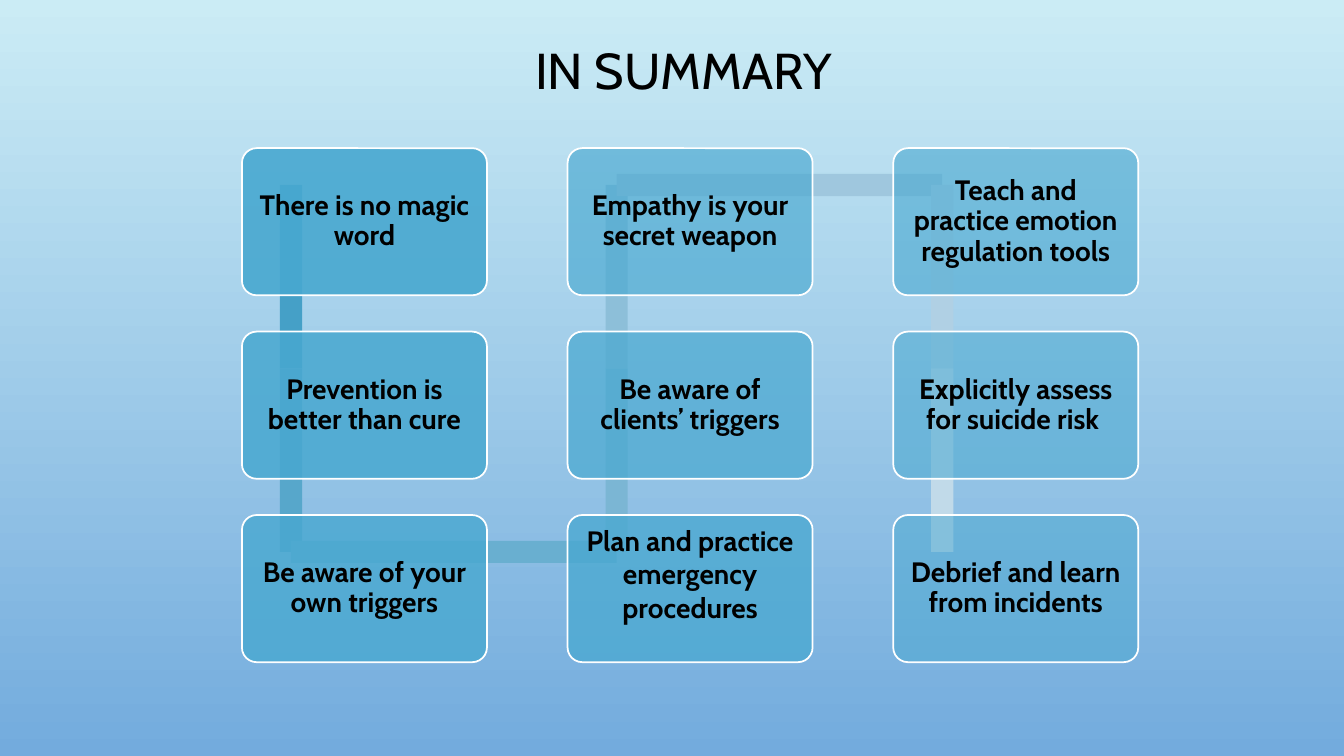
from dataclasses import dataclass

import pptx
import pptx.dml.color
import pptx.enum.shapes
import pptx.enum.text
import pptx.oxml.ns
import pptx.slide
import pptx.util
from lxml import etree

In = pptx.util.Inches
Pt = pptx.util.Pt
SHAPE = pptx.enum.shapes.MSO_SHAPE

COLORS = {
    "sky_top": "CBECF5", "sky_bottom": "73ABDD",
    "card": "48A8D0", "border": "FFFFFF", "text": "000000",
    "link0": "45A0C7", "link1": "57A7CB", "link2": "69AFD0", "link3": "7BB6D4",
    "link4": "8DBFD9", "link5": "9FC7DE", "link6": "B0D0E4", "link7": "C1DAE9",
}
FONT = "Cabin"

# Grid of cards, in inches
LEFT, TOP = 2.4, 1.47
COL_STEP, ROW_STEP = 3.23, 1.82
CARD_W, CARD_H = 2.43, 1.46
LINK_W = 0.22
INSET = 0.12


@dataclass
class Card:
    col: int
    row: int
    text: str
    line_spacing: float = 0.9
    inset_top: float = INSET
    inset_bottom: float = INSET

    @property
    def left(self) -> float:
        return LEFT + self.col * COL_STEP

    @property
    def top(self) -> float:
        return TOP + self.row * ROW_STEP

    @property
    def joint(self) -> tuple[float, float]:
        """Point inside the card where the links meet."""
        return self.left + 0.2 * CARD_W, self.top + 0.25 * CARD_H


CARDS = [
    Card(0, 0, "There is no magic word"),
    Card(0, 1, "Prevention is better than cure"),
    Card(0, 2, "Be aware of your own triggers"),
    Card(1, 2, "Plan and practice emergency procedures", 1.0, 0.04, 0.34),
    Card(1, 1, "Be aware of clients’ triggers"),
    Card(1, 0, "Empathy is your secret weapon"),
    Card(2, 0, "Teach and practice emotion regulation tools"),
    Card(2, 1, "Explicitly assess for suicide risk "),
    Card(2, 2, "Debrief and learn from incidents"),
]


def rgb(name: str) -> pptx.dml.color.RGBColor:
    return pptx.dml.color.RGBColor.from_string(COLORS[name])


def write(sp, text: str, size: int, bold: bool, line_spacing: float) -> None:
    tf = sp.text_frame
    tf.word_wrap = True
    tf.vertical_anchor = pptx.enum.text.MSO_ANCHOR.MIDDLE
    p = tf.paragraphs[0]
    p.text = text
    p.alignment = pptx.enum.text.PP_ALIGN.CENTER
    p.line_spacing = line_spacing
    font = p.runs[0].font
    font.name, font.size, font.bold = FONT, Pt(size), bold
    font.color.rgb = rgb("text")


def add_filled(s: pptx.slide.Slide, kind, x: float, y: float, w: float, h: float,
               color: str):
    sp = s.shapes.add_shape(kind, In(x), In(y), In(w), In(h))
    sp.shadow.inherit = False
    sp.fill.solid()
    sp.fill.fore_color.rgb = rgb(color)
    return sp


def add_link(s: pptx.slide.Slide, start: Card, end: Card, color: str) -> None:
    (x1, y1), (x2, y2) = start.joint, end.joint
    if start.row == end.row:
        box = (x1, y1 - LINK_W / 2, x2 - x1, LINK_W)
    else:
        box = (x1 - LINK_W / 2, min(y1, y2), LINK_W, abs(y2 - y1))
    add_filled(s, SHAPE.RECTANGLE, *box, color).line.fill.background()


def add_card(s: pptx.slide.Slide, card: Card, opacity: int) -> None:
    sp = add_filled(s, SHAPE.ROUNDED_RECTANGLE, card.left, card.top,
                    CARD_W, CARD_H, "card")
    sp.adjustments[0] = 0.1
    sp.line.color.rgb = rgb("border")
    sp.line.width = Pt(1.25)
    qn = pptx.oxml.ns.qn
    clr = sp.fill._xPr.find(qn("a:solidFill")).find(qn("a:srgbClr"))
    etree.SubElement(clr, qn("a:alpha")).set("val", str(opacity * 1000))
    tf = sp.text_frame
    tf.margin_left = tf.margin_right = In(INSET)
    tf.margin_top, tf.margin_bottom = In(card.inset_top), In(card.inset_bottom)
    write(sp, card.text, 20, True, card.line_spacing)


def paint_background(s: pptx.slide.Slide) -> None:
    fill = s.background.fill
    fill.gradient()
    fill.gradient_angle = 270
    for stop, position, name in zip(fill.gradient_stops, (0, 1),
                                    ("sky_top", "sky_bottom")):
        stop.position = position
        stop.color.rgb = rgb(name)


def main() -> None:
    prs = pptx.Presentation()
    prs.slide_width, prs.slide_height = In(13.33), In(7.5)
    s = prs.slides.add_slide(prs.slide_layouts[6])
    paint_background(s)
    title = s.shapes.add_textbox(In(1.17), In(0.18), In(11.33), In(1.09))
    write(title, "IN SUMMARY ", 36, False, 0.9)
    for i, card in enumerate(CARDS):
        if i + 1 < len(CARDS):
            add_link(s, card, CARDS[i + 1], f"link{i}")
        add_card(s, card, 90 - 5 * i)
    prs.save("out.pptx")


if __name__ == "__main__":
    main()
